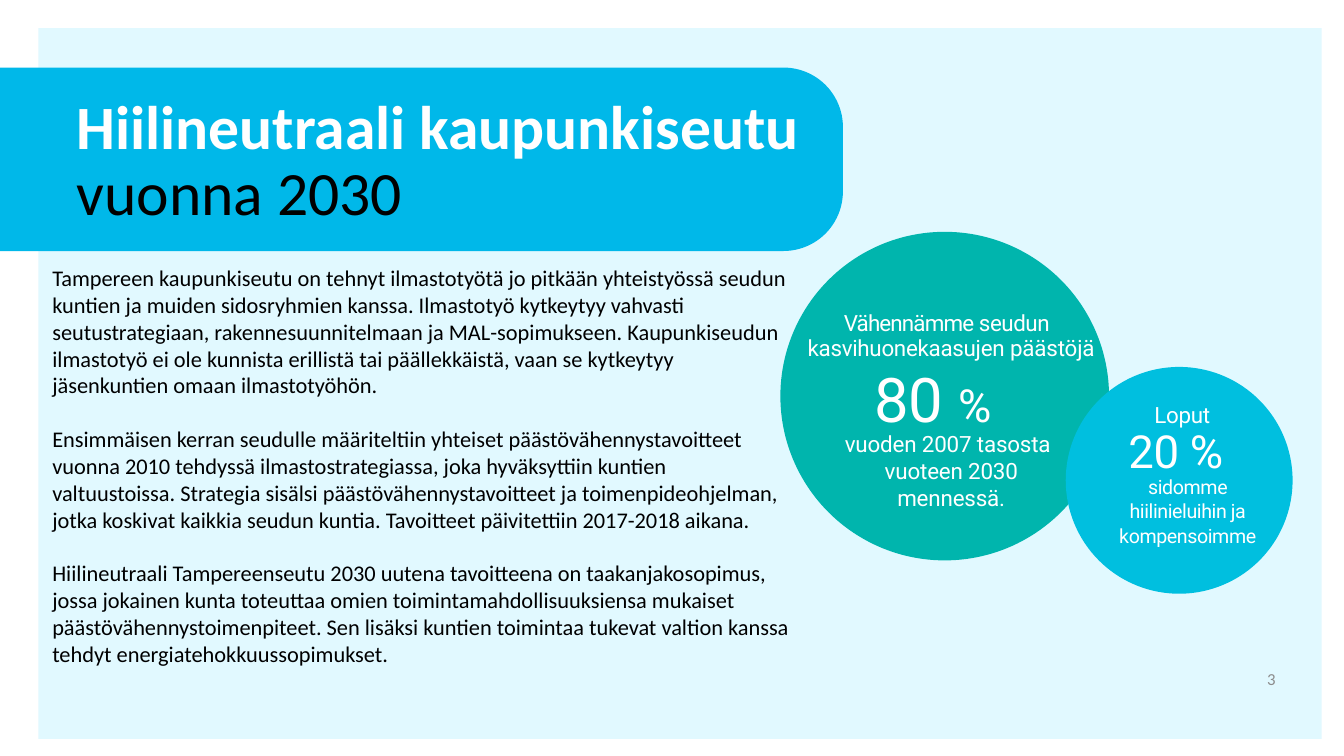
import pptx
import pptx.util
import pptx.dml.color
import pptx.enum.shapes
import pptx.enum.text
import lxml.etree

Inches, Pt = pptx.util.Inches, pptx.util.Pt
SHAPE = pptx.enum.shapes.MSO_SHAPE
ALIGN = pptx.enum.text.PP_ALIGN
ANCHOR = pptx.enum.text.MSO_ANCHOR
WIDE, HIGH = 13.33, 7.5
WHITE = "FFFFFF"

BODY = [
    "Tampereen kaupunkiseutu on tehnyt ilmastotyötä jo pitkään yhteistyössä seudun "
    "kuntien ja muiden sidosryhmien kanssa. Ilmastotyö kytkeytyy vahvasti "
    "seutustrategiaan, rakennesuunnitelmaan ja MAL-sopimukseen. Kaupunkiseudun "
    "ilmastotyö ei ole kunnista erillistä tai päällekkäistä, vaan se kytkeytyy "
    "jäsenkuntien omaan ilmastotyöhön.",
    "Ensimmäisen kerran seudulle määriteltiin yhteiset päästövähennystavoitteet "
    "vuonna 2010 tehdyssä ilmastostrategiassa, joka hyväksyttiin kuntien "
    "valtuustoissa. Strategia sisälsi päästövähennystavoitteet ja toimenpideohjelman, "
    "jotka koskivat kaikkia seudun kuntia. Tavoitteet päivitettiin 2017-2018 aikana.",
    "Hiilineutraali Tampereenseutu 2030 uutena tavoitteena on taakanjakosopimus, "
    "jossa jokainen kunta toteuttaa omien toimintamahdollisuuksiensa mukaiset "
    "päästövähennystoimenpiteet. Sen lisäksi kuntien toimintaa tukevat valtion kanssa "
    "tehdyt energiatehokkuussopimukset.",
]

# Each label: left, top, width, height as percent of the circle, then its paragraphs.
# Each paragraph: its runs (text, size, letter spacing), then paragraph formats.
CUT = [
    ((19.3, 23, 67.2, 9.2),
     [([("Vähennämme ", 16, -0.6), ("seudun", 16, -0.3)], {})]),
    ((8.3, 30.4, 89.3, 9.2),
     [([("kasvihuonekaasujen ", 16, -0.2), ("päästöjä", 16, -0.1)], {})]),
    ((28.5, 38.7, 48.8, 23),
     [([("80 ", 44, -0.2), ("%", 32.5, -0.2)], {})]),
    ((19.6, 59.8, 66.6, 25.8),
     [([("vuoden 2007 tasosta", 16, -0.1)], {}),
      ([("vuoteen 2030 mennessä.", 16, -0.1)],
       {"alignment": ALIGN.CENTER, "line_spacing": 1.01, "sides": (0.37, 0.43)})]),
]
REST = [
    ((39.1, 14.2, 26.7, 13.3), [([("Loput", 16, -0.2)], {})]),
    ((27.6, 24, 50.7, 25.3), [([("20 %", 32.5, -0.2)], {})]),
    ((15.6, 46.7, 76.4, 44),
     [([("sidomme hiilinieluihin ja", 14, -0.3)], {"alignment": ALIGN.CENTER}),
      ([("kompensoimme", 14, -0.3)],
       {"alignment": ALIGN.CENTER, "space_before": Pt(1.2)})]),
]


def tint(code):
    return pptx.dml.color.RGBColor.from_string(code)


def put(item, values):
    for name, value in values.items():
        setattr(item, name, value)


def span(box):
    return [Inches(part) for part in box]


def block(slide, kind, box, color):
    """Add a plain filled shape without outline or shadow."""
    shape = slide.shapes.add_shape(kind, *span(box))
    shape.shadow.inherit = False
    shape.fill.solid()
    shape.fill.fore_color.rgb = tint(color)
    shape.line.fill.background()
    return shape


def style(font, size, color, face="Calibri", bold=False):
    put(font, {"size": Pt(size), "name": face, "bold": bold})
    font.color.rgb = tint(color)


def text(slide, box, inset=(0.1, 0.05), anchor=ANCHOR.TOP):
    frame = slide.shapes.add_textbox(*span(box)).text_frame
    side, edge = span(inset)
    put(frame, {"word_wrap": True, "vertical_anchor": anchor,
                "margin_left": side, "margin_right": side,
                "margin_top": edge, "margin_bottom": edge})
    return frame


def lines(frame, count):
    """Return the given number of paragraphs of an empty frame."""
    return [frame.paragraphs[0]] + [frame.add_paragraph() for _ in range(count - 1)]


def ground(slide, box):
    sheet = block(slide, SHAPE.RECTANGLE, box, "D7F7FF")
    code = next(sheet.fill._xPr.iter("{*}srgbClr"))
    space = lxml.etree.QName(code).namespace
    lxml.etree.SubElement(code, f"{{{space}}}alpha", val="74000")


def head(slide, box):
    """Place the banner, rounded on its right side, and the title on it."""
    x, y, w, h = box
    turned = (x + (w - h) / 2, y + (h - w) / 2, h, w)
    banner = block(slide, SHAPE.ROUND_2_SAME_RECTANGLE, turned, "00B8E9")
    banner.rotation = 90
    banner.adjustments[0] = 0.324
    banner.adjustments[1] = 0

    title = slide.shapes.title
    slide.shapes._spTree.append(title._element)
    place = span((x + 0.66, y - 0.18, w + 0.57, h + 0.42))
    put(title, dict(zip(("left", "top", "width", "height"), place)))
    frame = title.text_frame
    frame.text = "Hiilineutraali kaupunkiseutu\vvuonna 2030"
    put(frame, {"vertical_anchor": ANCHOR.MIDDLE, "word_wrap": True,
                "auto_size": pptx.enum.text.MSO_AUTO_SIZE.NONE})
    line = frame.paragraphs[0]
    put(line, {"alignment": ALIGN.LEFT, "line_spacing": 0.9})
    style(line.runs[0].font, 44, WHITE, bold=True)


def story(slide, box):
    frame = text(slide, box)
    for spot, (line, words) in enumerate(zip(lines(frame, len(BODY)), BODY)):
        line.text = words
        style(line.runs[0].font, 16, "000000")
        if spot:
            line.space_before = Pt(19.2)


def label(slide, box, parts):
    frame = text(slide, box, inset=(0, 0.02))
    for line, (runs, form) in zip(lines(frame, len(parts)), parts):
        put(line, {name: value for name, value in form.items() if name != "sides"})
        if "sides" in form:
            for name, side in zip(("marL", "marR"), span(form["sides"])):
                line._p.get_or_add_pPr().set(name, str(int(side)))
        for words, size, gap in runs:
            run = line.add_run()
            run.text = words
            style(run.font, size, WHITE, face="Roboto")
            run._r.get_or_add_rPr().set("spc", str(round(gap * 100)))


def disc(slide, box, color, labels):
    x, y, size = box
    block(slide, SHAPE.OVAL, (x, y, size, size), color)
    for share, parts in labels:
        left, top, w, h = [part * size / 100 for part in share]
        label(slide, (x + left, y + top, w, h), parts)


def page(slide, box):
    frame = text(slide, box, anchor=ANCHOR.MIDDLE)
    line = frame.paragraphs[0]
    line.text = "3"
    line.alignment = ALIGN.RIGHT
    style(line.runs[0].font, 12, "8C8C8C")


def main():
    deck = pptx.Presentation()
    put(deck, {"slide_width": Inches(WIDE), "slide_height": Inches(HIGH)})
    slide = deck.slides.add_slide(deck.slide_layouts.get_by_name("Title Only"))
    ground(slide, (0.38, 0.28, 12.73, 7.05))
    head(slide, (0, 0.67, 8.36, 1.82))
    story(slide, (0.42, 2.57, 7.51, 4.81))
    page(slide, (9.75, 6.53, 3, 0.4))
    disc(slide, (7.74, 2.3, 3.26), "00B5AD", CUT)
    disc(slide, (10.57, 3.64, 2.25), "00BFDF", REST)
    deck.save("out.pptx")


if __name__ == "__main__":
    main()
